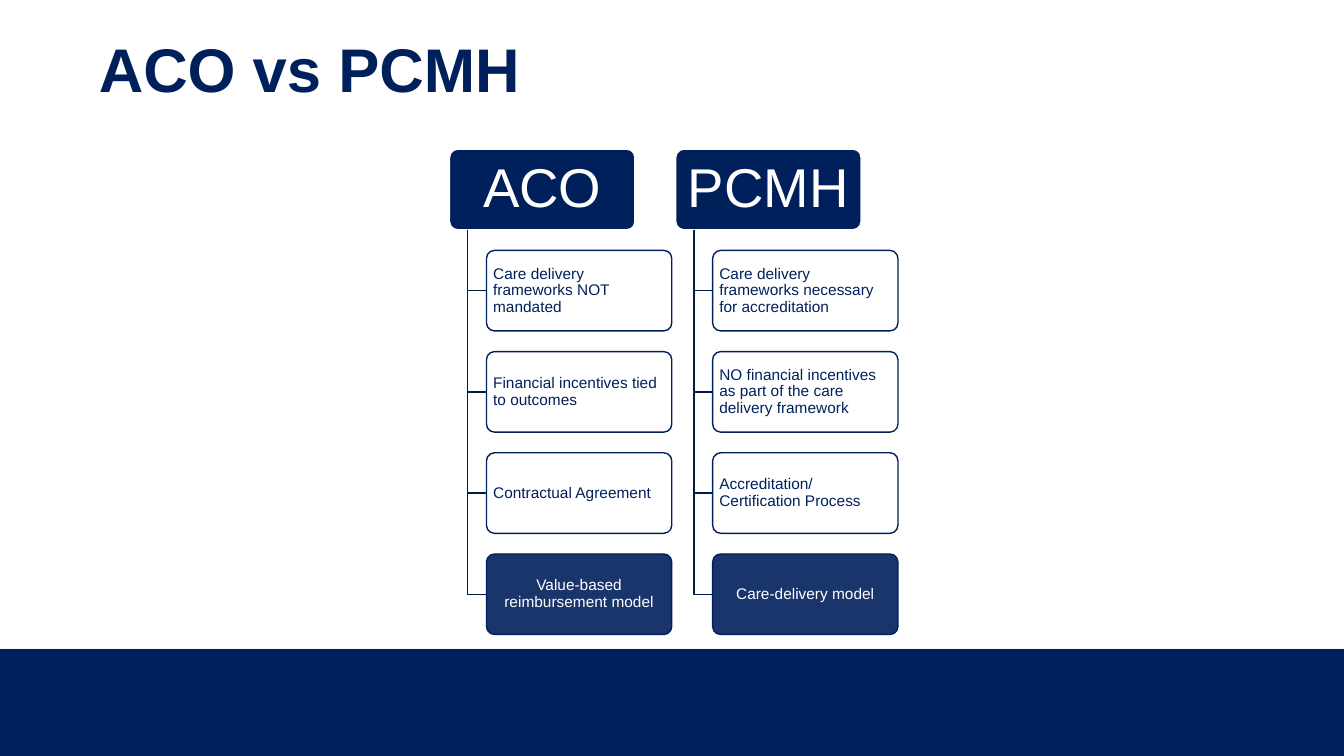
from lxml import etree
from pptx import Presentation
from pptx.dml.color import RGBColor
from pptx.enum.shapes import MSO_SHAPE
from pptx.enum.text import MSO_ANCHOR, MSO_AUTO_SIZE, PP_ALIGN
from pptx.oxml.ns import qn
from pptx.util import Cm, Pt

RECTANGLE, ROUNDED = MSO_SHAPE.RECTANGLE, MSO_SHAPE.ROUNDED_RECTANGLE
LEFT, CENTER = PP_ALIGN.LEFT, PP_ALIGN.CENTER
MIDDLE = MSO_ANCHOR.MIDDLE
NO_AUTOFIT = MSO_AUTO_SIZE.NONE

# Content
TITLE = "ACO vs PCMH"
MODELS = [
    ("ACO", [
        "Care delivery frameworks NOT mandated",
        "Financial incentives tied to outcomes",
        "Contractual Agreement",
        "Value-based reimbursement model",
    ]),
    ("PCMH", [
        "Care delivery frameworks necessary for accreditation",
        "NO financial incentives as part of the care delivery framework",
        "Accreditation/Certification Process",
        "Care-delivery model",
    ]),
]
COLORS = {"navy": "00205B", "branch": "001A49", "white": "FFFFFF", "pale": "F8F8F8"}
FONT = "Arial"

# Layout, in centimetres
SLIDE_WIDTH, SLIDE_HEIGHT = 33.87, 19.05
BAND_TOP = 16.36
TREE_LEFT, TREE_TOP = 11.33, 3.76
BOX_WIDTH, BOX_HEIGHT = 4.67, 2.03
COLUMN_STEP, ROW_STEP = 5.7, 2.55
TRUNK_INDENT, BOX_INDENT = 0.46, 0.93


def color(name):
    return RGBColor.from_string(COLORS[name])


def write_text(shape, text, size, text_color, align=LEFT, bold=False, inset=(0.25, 0.13)):
    frame = shape.text_frame
    frame.word_wrap = True
    frame.auto_size = NO_AUTOFIT
    frame.vertical_anchor = MIDDLE
    frame.margin_left = frame.margin_right = Cm(inset[0])
    frame.margin_top = frame.margin_bottom = Cm(inset[1])
    paragraph = frame.paragraphs[0]
    paragraph.alignment = align
    paragraph.line_spacing = 0.9
    run = paragraph.add_run()
    run.text = text
    run.font.name = FONT
    run.font.size = Pt(size)
    run.font.bold = bold
    run.font.color.rgb = color(text_color)


def add_box(slide, kind, left, top, width, height, fill, line=None, opacity=100):
    shape = slide.shapes.add_shape(kind, Cm(left), Cm(top), Cm(width), Cm(height))
    shape.shadow.inherit = False
    shape.fill.solid()
    shape.fill.fore_color.rgb = color(fill)
    if opacity < 100:
        fill_color = shape.fill._xPr.find(qn("a:solidFill"))[0]
        etree.SubElement(fill_color, qn("a:alpha"), val=str(opacity * 1000))
    if line:
        shape.line.color.rgb = color(line)
        shape.line.width = Pt(1)
    else:
        shape.line.fill.background()
    if kind == ROUNDED:
        shape.adjustments[0] = 0.1
    return shape


def add_branch(slide, trunk_x, start_y, end_x, end_y):
    builder = slide.shapes.build_freeform(Cm(trunk_x), Cm(start_y))
    builder.add_line_segments(
        [(Cm(trunk_x), Cm(end_y)), (Cm(end_x), Cm(end_y))], close=False)
    branch = builder.convert_to_shape()
    branch.shadow.inherit = False
    branch.fill.background()
    branch.line.color.rgb = color("branch")
    branch.line.width = Pt(1)


def add_model(slide, left, name, features):
    header = add_box(slide, ROUNDED, left, TREE_TOP, BOX_WIDTH, BOX_HEIGHT, "navy", "white")
    write_text(header, name, 39, "white", CENTER)
    for row, feature in enumerate(features, start=1):
        top = TREE_TOP + row * ROW_STEP
        box_left = left + BOX_INDENT
        add_branch(slide, left + TRUNK_INDENT, TREE_TOP + BOX_HEIGHT,
                   box_left, top + BOX_HEIGHT / 2)
        # The last box sums up the model and is filled
        is_summary = row == len(features)
        fill, text_color, align = (
            ("navy", "white", CENTER) if is_summary else ("white", "navy", LEFT))
        box = add_box(slide, ROUNDED, box_left, top, BOX_WIDTH, BOX_HEIGHT,
                      fill, "navy", opacity=90)
        write_text(box, feature, 11, text_color, align, inset=(0.11, 0.11))


def main():
    presentation = Presentation()
    presentation.slide_width = Cm(SLIDE_WIDTH)
    presentation.slide_height = Cm(SLIDE_HEIGHT)
    slide = presentation.slides.add_slide(presentation.slide_layouts[5])

    # Footer band with a thin pale edge
    for top, fill in ((BAND_TOP - 0.03, "pale"), (BAND_TOP, "navy")):
        add_box(slide, RECTANGLE, 0, top, SLIDE_WIDTH, SLIDE_HEIGHT - top, fill)

    # Title
    title = slide.shapes.title
    title.left, title.top, title.width, title.height = Cm(2.24), Cm(0), Cm(29.21), Cm(3.68)
    write_text(title, TITLE, 44, "navy", bold=True)

    # One tree per model
    for column, (name, features) in enumerate(MODELS):
        add_model(slide, TREE_LEFT + column * COLUMN_STEP, name, features)

    presentation.save("out.pptx")


if __name__ == "__main__":
    main()
